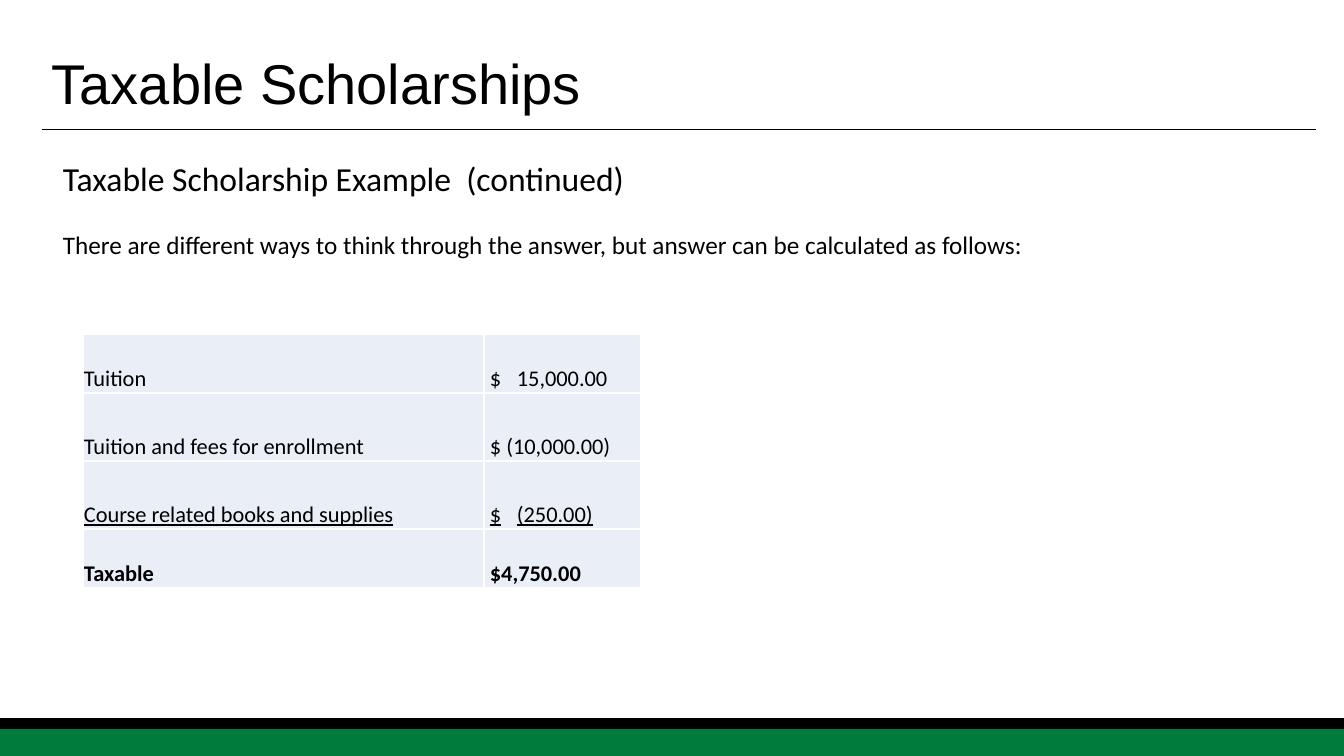
from dataclasses import dataclass

from lxml import etree
from pptx import Presentation
from pptx import util as u
from pptx.dml.color import RGBColor
from pptx.enum import shapes, text
from pptx.oxml.ns import qn

SCALE = 914400 / 100.8  # EMU in one px


@dataclass(frozen=True)
class Theme:
    ink: str = "000000"
    green: str = "007B3B"
    cell: str = "EAEFF7"
    edge: str = "FFFFFF"
    head: str = "Arial"
    body: str = "Calibri"
    title: int = 40
    lead: int = 24
    note: int = 18
    grid: int = 16


THEME = Theme()

ROWS = [
    ("Tuition", "$\t15,000.00"),
    ("Tuition and fees for enrollment", "$ (10,000.00)"),
    ("Course related books and supplies", "$\t(250.00)"),
    ("Taxable", "$4,750.00"),
]
WIDTHS = [401, 157]
HEIGHTS = [59, 68, 68, 59]


def px(n):
    return u.Emu(round(n * SCALE))


def rgb(code):
    return RGBColor.from_string(code)


def style(para, face, size):
    para.font.name = face
    para.font.size = u.Pt(size)
    para.font.color.rgb = rgb(THEME.ink)


def add_rule(slide, x1, x2, y):
    rule = slide.shapes.add_connector(
        shapes.MSO_CONNECTOR.STRAIGHT, px(x1), px(y), px(x2), px(y))
    rule.line.color.rgb = rgb(THEME.ink)
    rule.line.width = u.Pt(0.5)
    etree.SubElement(rule._element.spPr, qn("a:effectLst"))


def add_band(slide, y, h, color):
    band = slide.shapes.add_shape(
        shapes.MSO_SHAPE.RECTANGLE, 0, px(y), px(1344), px(h))
    band.shadow.inherit = False
    band.fill.solid()
    band.fill.fore_color.rgb = rgb(color)
    band.line.color.rgb = rgb(color)
    band.line.width = u.Pt(1)


def add_text(slide, box, lines, anchor=text.MSO_ANCHOR.TOP):
    """Each line is (words, face, size, space before)."""
    frame = slide.shapes.add_textbox(*map(px, box)).text_frame
    frame.word_wrap = True
    frame.vertical_anchor = anchor
    for i, (words, face, size, gap) in enumerate(lines):
        para = frame.add_paragraph() if i else frame.paragraphs[0]
        para.text = words
        if gap:
            para.space_before = u.Pt(gap)
        style(para, face, size)
    return frame


def add_edges(cell):
    props = cell._tc.get_or_add_tcPr()
    for i, side in enumerate("LRTB"):
        edge = etree.Element(qn(f"a:ln{side}"), w=str(u.Pt(1)))
        fill = etree.SubElement(edge, qn("a:solidFill"))
        etree.SubElement(fill, qn("a:srgbClr"), val=THEME.edge)
        props.insert(i, edge)


def add_tab(para, stop):
    tabs = etree.SubElement(para._p.get_or_add_pPr(), qn("a:tabLst"))
    etree.SubElement(tabs, qn("a:tab"), pos=str(px(stop)), algn="l")


def fill_cell(cell, words, inset):
    cell.fill.solid()
    cell.fill.fore_color.rgb = rgb(THEME.cell)
    cell.vertical_anchor = text.MSO_ANCHOR.BOTTOM
    cell.margin_left = px(inset)
    cell.margin_right = cell.margin_top = px(1)
    cell.margin_bottom = 0
    add_edges(cell)
    para = cell.text_frame.paragraphs[0]
    para.text = words
    if "\t" in words:
        add_tab(para, 27)
    style(para, THEME.body, THEME.grid)
    return para.font


def add_grid(slide, x, y):
    grid = slide.shapes.add_table(
        len(ROWS), len(WIDTHS), px(x), px(y),
        px(sum(WIDTHS)), px(sum(HEIGHTS))).table
    grid.first_row = grid.horz_banding = False
    for col, w in zip(grid.columns, WIDTHS):
        col.width = px(w)
    for r, (pair, h) in enumerate(zip(ROWS, HEIGHTS)):
        grid.rows[r].height = px(h)
        for c, words in enumerate(pair):
            font = fill_cell(grid.cell(r, c), words, 6 if c else 1)
            # Underline the last deduction, embolden the result
            if r == len(ROWS) - 2:
                font.underline = True
            elif r == len(ROWS) - 1:
                font.bold = True


def main():
    deck = Presentation()
    deck.slide_width, deck.slide_height = px(1344), px(756)
    slide = deck.slides.add_slide(deck.slide_layouts[6])

    # Frame: header rule and footer bands
    add_rule(slide, 42, 1316, 129)
    add_band(slide, 728, 28, THEME.green)
    add_band(slide, 719, 9, THEME.ink)

    # Title
    title = add_text(
        slide, (42, 47, 1090, 79),
        [("Taxable Scholarships", THEME.head, THEME.title, 0)],
        text.MSO_ANCHOR.MIDDLE)
    title.paragraphs[0].line_spacing = 0.9

    # Introduction
    add_text(slide, (53, 153, 1049, 207), [
        ("Taxable Scholarship Example  (continued)",
         THEME.body, THEME.lead, 0),
        ("There are different ways to think through the answer, "
         "but answer can be calculated as follows:",
         THEME.body, THEME.note, 22),
    ])

    # Calculation
    add_grid(slide, 83, 334)

    deck.save("out.pptx")


if __name__ == "__main__":
    main()
